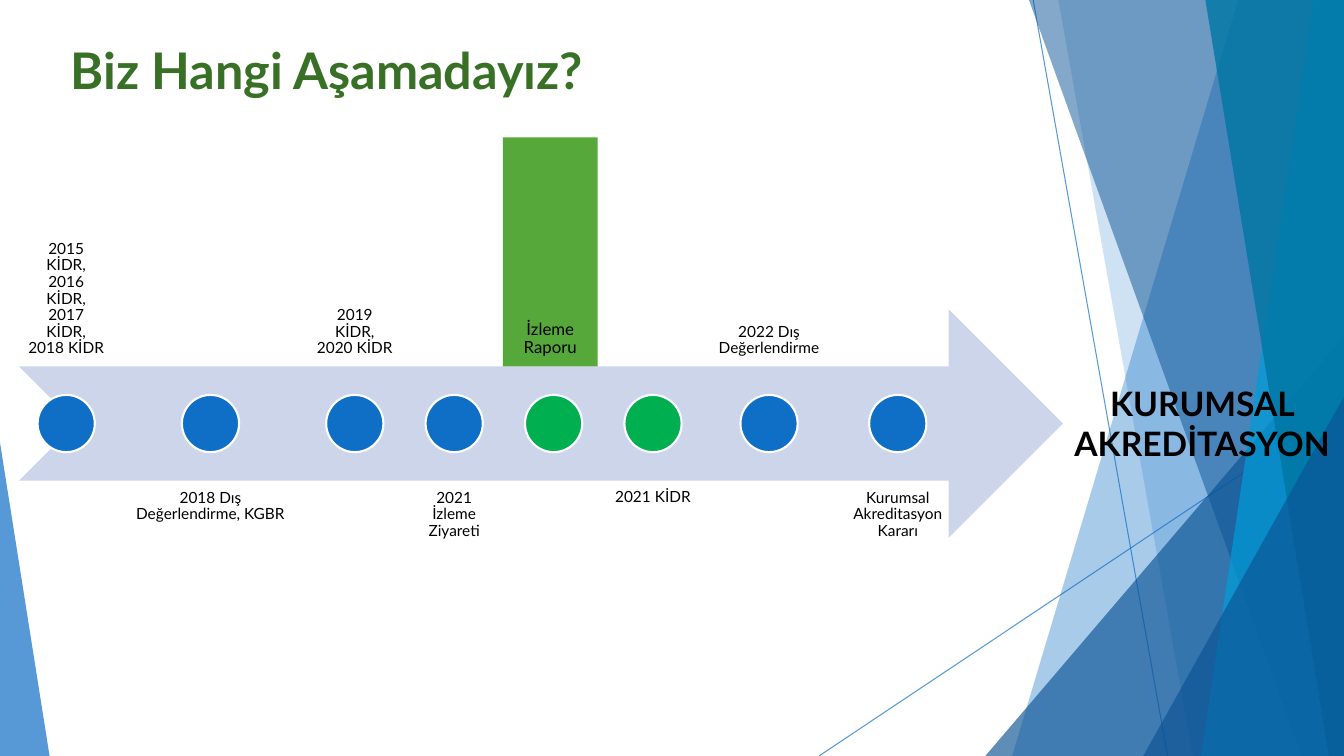
import pptx
import pptx.dml.color
import pptx.enum.shapes
import pptx.enum.text
import pptx.oxml.ns
import pptx.util
from lxml import etree

RGBColor = pptx.dml.color.RGBColor
ShapeType = pptx.enum.shapes.MSO_SHAPE
Anchor = pptx.enum.text.MSO_ANCHOR
Align = pptx.enum.text.PP_ALIGN

BLUE = RGBColor(0x0F, 0x6F, 0xC6)
NAVY = RGBColor(0x0B, 0x53, 0x94)
CYAN = RGBColor(0x00, 0x9D, 0xD9)
TEAL = RGBColor(0x00, 0x76, 0xA3)
PALE_BLUE = RGBColor(0xCC, 0xD5, 0xEA)
DARK_GREEN = RGBColor(0x38, 0x70, 0x26)
LEAF_GREEN = RGBColor(0x55, 0xA8, 0x39)
GREEN = RGBColor(0x00, 0xB0, 0x50)
BLACK = RGBColor(0, 0, 0)
WHITE = RGBColor(0xFF, 0xFF, 0xFF)

COLUMNS, ROWS = 160, 90
CELL = pptx.util.Inches(7.5) / ROWS

ARROW_LEFT, ARROW_TOP, ARROW_WIDTH, BAND = 2.25, 36.8, 124.3, 27.25
LABEL_STEP = BAND * 0.75
DOT = BAND / 4
STAGE_WIDTH = 11.27
STAGE_GAP = STAGE_WIDTH * 0.05
HIGHLIGHT_SHIFT = -0.4

# Corner points, fill colour, opacity in percent
PANELS = [
    ([(147.4, 0), (160, 0), (160, 90), (120.5, 90)], BLUE, 36),
    ([(126, 0), (160, 0), (160, 90), (142, 90)], BLUE, 20),
    ([(160, 40), (160, 90), (117.3, 90)], NAVY, 66),
    ([(122.5, 0), (160, 0), (160, 90), (155, 90)], NAVY, 50),
    ([(156.4, 0), (160, 0), (160, 90), (143, 90)], CYAN, 70),
    ([(143.5, 0), (160, 0), (160, 90), (158.2, 90)], TEAL, 80),
    ([(160, 47.2), (160, 90), (136.1, 90)], NAVY, 66),
    ([(0, 52.7), (0, 90), (5.9, 90)], BLUE, 70),
]

# Label, width, dot colour, whether the label is highlighted
STAGES = [
    ("2015 KİDR, 2016 KİDR, 2017 KİDR, 2018 KİDR", STAGE_WIDTH, BLUE, False),
    ("2018 Dış Değerlendirme, KGBR", 21.96, BLUE, False),
    ("2019 KİDR, 2020 KİDR", STAGE_WIDTH, BLUE, False),
    ("2021 İzleme Ziyareti", STAGE_WIDTH, BLUE, False),
    ("İzleme Raporu", STAGE_WIDTH, GREEN, True),
    ("2021 KİDR", STAGE_WIDTH, GREEN, False),
    ("2022 Dış Değerlendirme", 15.24, BLUE, False),
    ("Kurumsal Akreditasyon Kararı", 14.28, BLUE, False),
]


def cells(*values):
    """Convert grid cells to slide units."""
    return [pptx.util.Emu(round(value * CELL)) for value in values]


def set_opacity(color_parent, percent):
    """Make the solid colour found under an element see-through."""
    color = color_parent.find(".//" + pptx.oxml.ns.qn("a:srgbClr"))
    alpha = etree.SubElement(color, pptx.oxml.ns.qn("a:alpha"))
    alpha.set("val", str(percent * 1000))


class SlideBuilder:
    """Holds the font and the slide; places are in grid cells."""

    def __init__(self, slide, font="Lato"):
        self.slide = slide
        self.shapes = slide.shapes
        self.font = font

    def add_run(self, frame, text, size, color=BLACK, bold=False, align=Align.CENTER):
        paragraph = frame.paragraphs[0]
        paragraph.alignment = align
        run = paragraph.add_run()
        run.text = text
        run.font.name = self.font
        run.font.size = pptx.util.Pt(size)
        run.font.bold = bold
        run.font.color.rgb = color
        return paragraph

    def title(self, text, box):
        shape = self.shapes.title
        shape.left, shape.top, shape.width, shape.height = cells(*box)
        frame = shape.text_frame
        frame.vertical_anchor = Anchor.TOP
        frame.auto_size = pptx.enum.text.MSO_AUTO_SIZE.NONE
        self.add_run(frame, text, 36, DARK_GREEN, True, Align.LEFT)
        self.shapes._spTree.append(shape._element)  # bring in front of the panels

    def text(self, text, box, size, bold=False, anchor=Anchor.TOP, spacing=1.0):
        frame = self.shapes.add_textbox(*cells(*box)).text_frame
        frame.word_wrap = True
        frame.vertical_anchor = anchor
        paragraph = self.add_run(frame, text, size, bold=bold)
        paragraph.line_spacing = spacing
        return frame

    def label(self, text, box, size, anchor):
        frame = self.text(text, box, size, anchor=anchor, spacing=0.9)
        inset = pptx.util.Inches(0.09)
        frame.margin_left = frame.margin_right = inset
        frame.margin_top = frame.margin_bottom = inset

    def shape(self, kind, box, fill, outline=None):
        shape = self.shapes.add_shape(kind, *cells(*box))
        self.paint(shape, fill)
        if outline is not None:
            shape.line.color.rgb = outline
            shape.line.width = pptx.util.Pt(1.5)

    def paint(self, shape, fill):
        shape.shadow.inherit = False
        shape.fill.solid()
        shape.fill.fore_color.rgb = fill
        shape.line.fill.background()

    def panel(self, points, fill, opacity):
        corners = [tuple(cells(*point)) for point in points]
        builder = self.shapes.build_freeform(*corners[0])
        builder.add_line_segments(corners[1:], close=True)
        shape = builder.convert_to_shape()
        self.paint(shape, fill)
        set_opacity(shape._element.spPr, opacity)

    def line(self, start, end):
        straight = pptx.enum.shapes.MSO_CONNECTOR.STRAIGHT
        connector = self.shapes.add_connector(straight, *cells(*start, *end))
        connector.line.color.rgb = BLUE
        connector.line.width = pptx.util.Pt(0.75)
        properties = connector._element.spPr
        set_opacity(properties, 70)
        etree.SubElement(properties, pptx.oxml.ns.qn("a:effectLst"))

    def timeline(self):
        """Draw the arrow with labels alternating above and below it."""
        arrow = (ARROW_LEFT, ARROW_TOP, ARROW_WIDTH, BAND)
        self.shape(ShapeType.NOTCHED_RIGHT_ARROW, arrow, PALE_BLUE)
        dot_top = ARROW_TOP + (BAND - DOT) / 2
        left = ARROW_LEFT
        for index, (text, width, color, highlighted) in enumerate(STAGES):
            above = index % 2 == 0
            label_top = ARROW_TOP + (-LABEL_STEP if above else LABEL_STEP)
            label_left = left + (HIGHLIGHT_SHIFT if highlighted else 0)
            box = (label_left, label_top, width, BAND)
            if highlighted:
                self.shape(ShapeType.RECTANGLE, box, LEAF_GREEN)
            anchor = Anchor.BOTTOM if above else Anchor.TOP
            self.label(text, box, 12 if highlighted else 11, anchor)
            dot_box = (left + (width - DOT) / 2, dot_top, DOT, DOT)
            self.shape(ShapeType.OVAL, dot_box, color, WHITE)
            left += width + STAGE_GAP


def main():
    presentation = pptx.Presentation()
    presentation.slide_width, presentation.slide_height = cells(COLUMNS, ROWS)
    title_only = presentation.slide_layouts[5]
    builder = SlideBuilder(presentation.slides.add_slide(title_only))
    builder.line((123, 0), (139, 90))
    builder.line((160, 48.3), (97.5, 90))
    for panel in PANELS:
        builder.panel(*panel)
    builder.title("Biz Hangi Aşamadayız?", (7.2, 4, 139.7, 15.5))
    builder.timeline()
    builder.text("KURUMSAL AKREDİTASYON", (126.5, 45, 33.2, 10.9), 24, bold=True)
    presentation.save("out.pptx")


if __name__ == "__main__":
    main()
